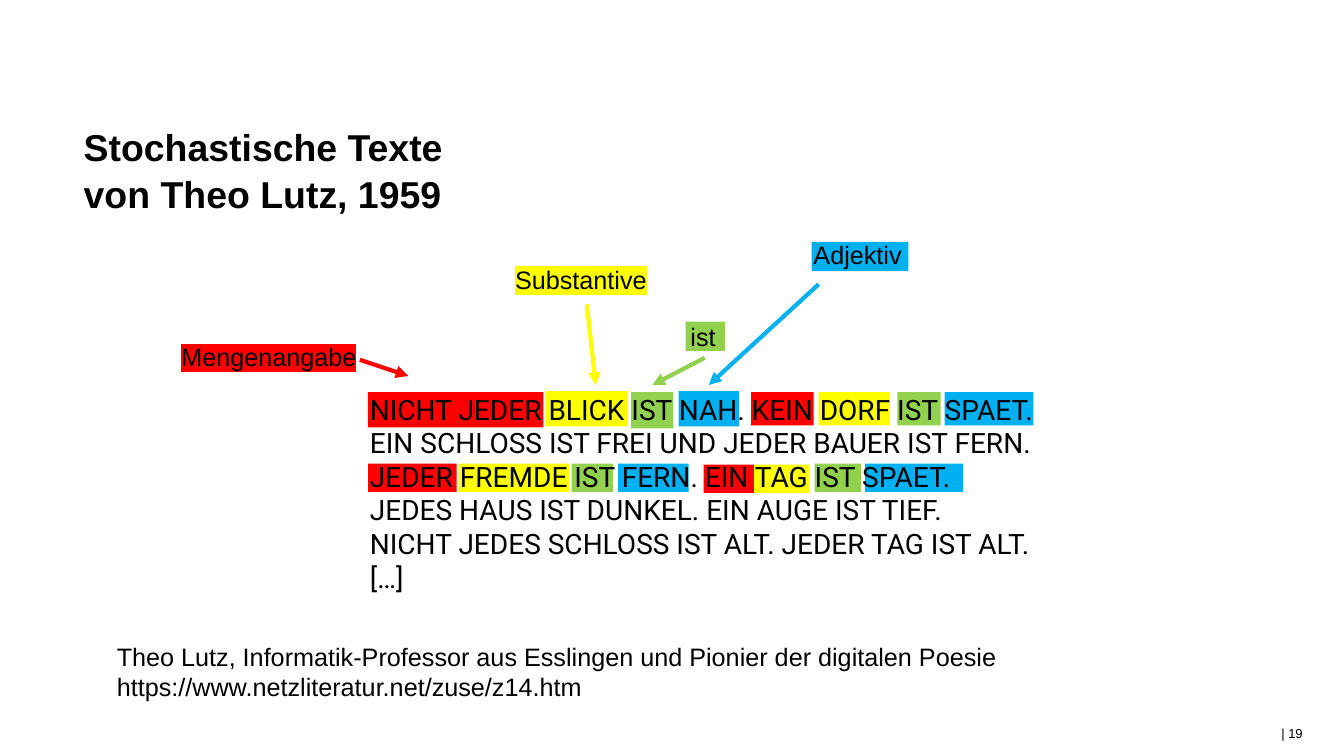
"""Build the slide on the stochastic texts of Theo Lutz."""
from lxml.etree import SubElement as Sub, Element as Elem
from pptx import Presentation as Deck
from pptx.dml.color import RGBColor as Rgb
from pptx.enum.shapes import MSO_CONNECTOR as Conn, MSO_SHAPE as Shape
from pptx.enum.text import MSO_ANCHOR as Anchor, MSO_AUTO_SIZE as Auto, PP_ALIGN as Align
from pptx.oxml.ns import qn
from pptx.util import Inches, Pt

BLACK = Rgb(0x00, 0x00, 0x00)
RED = Rgb(0xFF, 0x00, 0x00)
YELLOW = Rgb(0xFF, 0xFF, 0x00)
GREEN = Rgb(0x92, 0xD0, 0x50)
BLUE = Rgb(0x00, 0xB0, 0xF0)

HEAD = {"name": "Arial", "size": Pt(26.7), "bold": True}
BODY = {"name": "Arial", "size": Pt(18)}
POEM = {"name": "Roboto", "size": Pt(20)}
FOOT = {"name": "Arial", "size": Pt(9.3)}
BARE = {"margin_left": 0, "margin_top": 0, "margin_right": 0, "margin_bottom": 0}

VERSE = """NICHT JEDER BLICK IST NAH. KEIN DORF IST SPAET.
EIN SCHLOSS IST FREI UND JEDER BAUER IST FERN.
JEDER FREMDE IST FERN. EIN TAG IST SPAET.
JEDES HAUS IST DUNKEL. EIN AUGE IST TIEF.
NICHT JEDES SCHLOSS IST ALT. JEDER TAG IST ALT.
[…]"""

MARKS = {
    RED: [(3.65, 3.89, 1.74, 0.35), (7.45, 3.89, 0.62, 0.33),
          (3.65, 4.6, 0.88, 0.28), (6.98, 4.61, 0.5, 0.28)],
    YELLOW: [(5.41, 3.88, 0.82, 0.35), (8.12, 3.89, 0.71, 0.33),
             (4.55, 4.6, 1.1, 0.28), (7.48, 4.61, 0.55, 0.28)],
    GREEN: [(6.26, 3.89, 0.42, 0.36), (8.9, 3.89, 0.43, 0.33),
            (5.67, 4.6, 0.41, 0.28), (8.08, 4.6, 0.46, 0.28),
            (6.8, 3.19, 0.39, 0.29)],
    BLUE: [(6.73, 3.88, 0.6, 0.35), (9.37, 3.89, 0.88, 0.33),
           (6.13, 4.6, 0.7, 0.28), (8.58, 4.6, 0.97, 0.28),
           (8.05, 2.4, 0.96, 0.29)],
}
LABELS = [
    ("Mengenangabe", (1.7, 3.34, 2.09, 0.4), RED),
    ("Substantive", (5.01, 2.57, 1.64, 0.4), YELLOW),
    ("ist", (6.75, 3.14, 0.48, 0.4), None),
    ("Adjektiv", (7.97, 2.33, 1.36, 0.4), None),
]
ARROWS = [
    ((3.57, 3.57, 4.05, 3.73), RED),
    ((5.82, 3.02, 5.91, 3.82), YELLOW),
    ((6.99, 3.55, 6.47, 3.82), GREEN),
    ((8.12, 2.82, 7.03, 3.82), BLUE),
]


def inch(nums):
    return [Inches(num) for num in nums]


def apply(item, form):
    for key, value in form.items():
        setattr(item, key, value)


def write(para, text, form, glow=None):
    for row, line in enumerate(text.splitlines()):
        if row:
            para.add_line_break()
        run = para.add_run()
        run.text = line
        apply(run.font, form)
        run.font.color.rgb = BLACK
        if glow is not None:
            mark = Elem(qn("a:highlight"))
            Sub(mark, qn("a:srgbClr"), val=str(glow))
            run.font.fill
            run._r.rPr.find(qn("a:solidFill")).addnext(mark)


def add_text(slide, area, texts, form, glow=None):
    frame = slide.shapes.add_textbox(*inch(area)).text_frame
    frame.word_wrap = True
    for num, text in enumerate(texts):
        para = frame.add_paragraph() if num else frame.paragraphs[0]
        write(para, text, form, glow)
    return frame


def add_title(slide, area, text):
    title = slide.shapes.title
    apply(title, dict(zip(("left", "top", "width", "height"), inch(area))))
    frame = title.text_frame
    apply(frame, {**BARE, "word_wrap": True, "auto_size": Auto.NONE,
                  "vertical_anchor": Anchor.BOTTOM})
    para = frame.paragraphs[0]
    apply(para, {"alignment": Align.LEFT, "line_spacing": 1.05, "space_before": Pt(0)})
    write(para, text, HEAD)


def add_mark(slide, area, tone):
    mark = slide.shapes.add_shape(Shape.RECTANGLE, *inch(area))
    mark.shadow.inherit = False
    mark.fill.solid()
    mark.fill.fore_color.rgb = tone
    mark.line.fill.background()


def add_arrow(slide, ends, tone):
    arrow = slide.shapes.add_connector(Conn.STRAIGHT, *inch(ends))
    arrow.line.color.rgb = tone
    arrow.line.width = Pt(3)
    Sub(arrow.line._get_or_add_ln(), qn("a:tailEnd"), type="triangle")
    Sub(arrow._element.spPr, qn("a:effectLst"))


def main():
    deck = Deck()
    deck.slide_width, deck.slide_height = inch((13.33, 7.5))
    slide = deck.slides.add_slide(deck.slide_layouts[5])
    add_title(slide, (0.83, 1.21, 3.95, 0.93), "Stochastische Texte von Theo Lutz, 1959")
    for tone, areas in MARKS.items():
        for area in areas:
            add_mark(slide, area, tone)
    add_text(slide, (3.57, 3.84, 7.21, 2.12), [VERSE], POEM)
    for text, area, glow in LABELS:
        add_text(slide, area, [text], BODY, glow)
    for ends, tone in ARROWS:
        add_arrow(slide, ends, tone)
    add_text(slide, (1.06, 6.31, 9.72, 0.71), [
        "Theo Lutz, Informatik-Professor aus Esslingen und Pionier der digitalen Poesie",
        "https://www.netzliteratur.net/zuse/z14.htm"], BODY)
    foot = add_text(slide, (11.69, 7.2, 1.23, 0.29), ["| 19"], FOOT)
    apply(foot, BARE)
    foot.paragraphs[0].alignment = Align.RIGHT
    deck.save("out.pptx")


if __name__ == "__main__":
    main()
